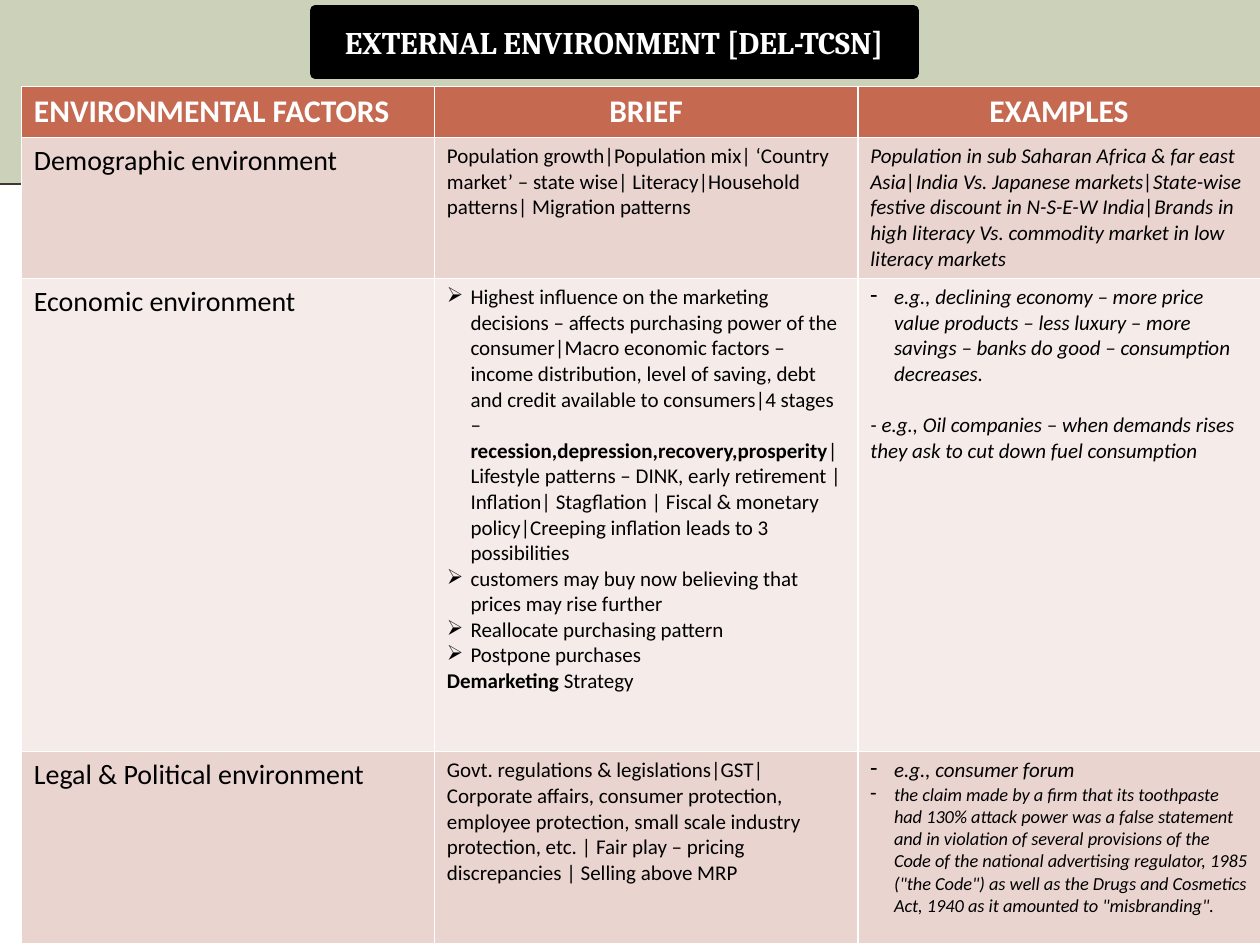
"""Build the slide on the external marketing environment."""
from lxml import etree
from pptx import Presentation
from pptx.dml.color import RGBColor
from pptx.enum import shapes, text
from pptx.oxml import ns
from pptx.util import Pt


def paint(fill, tint):
    fill.solid()
    fill.fore_color.rgb = RGBColor.from_string(tint)


def write(para, words, size, tint="000000", face="Calibri", bold=False, slant=False):
    run = para.add_run()
    run.text = words
    font = run.font
    font.size, font.name, font.bold, font.italic = Pt(size), face, bold, slant
    paint(font.fill, tint)


deck = Presentation()
deck.slide_width, deck.slide_height = Pt(720), Pt(540)
slide = deck.slides.add_slide(deck.slide_layouts[5])
paint(slide.background.fill, "CCD1B9")

page = slide.shapes.add_shape(shapes.MSO_SHAPE.RECTANGLE, Pt(0), Pt(105), Pt(720), Pt(435))
page.shadow.inherit = False
paint(page.fill, "FFFFFF")
page.line.fill.background()

rule = slide.shapes.add_connector(shapes.MSO_CONNECTOR.STRAIGHT, Pt(0), Pt(105), Pt(720), Pt(105))
paint(rule.line.fill, "3E3737")
rule.line.width = Pt(1)
etree.SubElement(rule._element.spPr, ns.qn("a:effectLst"))

title = slide.shapes.title
title.left, title.top, title.width, title.height = Pt(180), Pt(6), Pt(342), Pt(36)
paint(title.fill, "000000")
paint(title.line.fill, "000000")
title.line.width = Pt(6)
frame = title.text_frame
frame.vertical_anchor = text.MSO_ANCHOR.MIDDLE
frame.auto_size = text.MSO_AUTO_SIZE.NONE
para = frame.paragraphs[0]
para.alignment = text.PP_ALIGN.CENTER
para.space_before = Pt(4)
write(para, "EXTERNAL ENVIRONMENT [DEL-TCSN]", 18, "FFFFFF", "Cambria", True)

heads = ["ENVIRONMENTAL FACTORS", "BRIEF", "EXAMPLES"]
rows = [
    ("Demographic environment",
     [("", 12, 0, ["Population growth|Population mix| ‘Country market’ – state wise| "
                   "Literacy|Household patterns| Migration patterns"])],
     [("", 12, 0, ["Population in sub Saharan Africa & far east Asia|India Vs. Japanese markets|"
                   "State-wise festive discount in N-S-E-W India|Brands in high literacy Vs. "
                   "commodity market in low literacy markets"])]),
    ("Economic environment",
     [("➢", 12, 0, ["Highest influence on the marketing decisions – affects purchasing power of "
                    "the consumer|Macro economic factors – income distribution, level of saving, "
                    "debt and credit available to consumers|4 stages – ",
                    "recession,depression,recovery,prosperity",
                    "|Lifestyle patterns – DINK, early retirement | Inflation| Stagflation | "
                    "Fiscal & monetary policy|Creeping inflation leads to 3 possibilities"]),
      ("➢", 12, 0, ["customers may buy now believing that prices may rise further"]),
      ("➢", 12, 0, ["Reallocate purchasing pattern"]),
      ("➢", 12, 0, ["Postpone purchases"]),
      ("", 12, 0, ["", "Demarketing", " Strategy"])],
     [("-", 12, 0, ["e.g., declining economy – more price value products – less luxury – more "
                    "savings – banks do good – consumption decreases."]),
      ("", 12, 14.6, ["- e.g., Oil companies – when demands rises they ask to cut down fuel "
                      "consumption"])]),
    ("Legal & Political environment",
     [("", 12, 0, ["Govt. regulations & legislations|GST|Corporate affairs, consumer protection, "
                   "employee protection, small scale industry protection, etc. | Fair play – "
                   "pricing discrepancies | Selling above MRP"])],
     [("-", 12, 0, ["e.g., consumer forum"]),
      ("-", 10.5, 0, ["the claim made by a firm that its toothpaste had 130% attack power was a "
                      "false statement and in violation of several provisions of the Code of "
                      "the national advertising regulator, 1985 (\"the Code\") as well as the "
                      "Drugs and Cosmetics Act, 1940 as it amounted to \"misbranding\"."])]),
]

grid = slide.shapes.add_table(4, 3, Pt(12.2), Pt(49.4), Pt(708), Pt(490)).table
for col, width in zip(grid.columns, [236, 242, 230]):
    col.width = Pt(width)
for row, height in zip(grid.rows, [29, 80.5, 270.5, 110]):
    row.height = Pt(height)

for x, head in enumerate(heads):
    cell = grid.cell(0, x)
    paint(cell.fill, "C66951")
    para = cell.text_frame.paragraphs[0]
    para.alignment = text.PP_ALIGN.CENTER if x else text.PP_ALIGN.LEFT
    write(para, head, 18, "FFFFFF", bold=True)

for y, (name, brief, cases) in enumerate(rows, 1):
    for x, paras in enumerate([[("", 16, 0, [name])], brief, cases]):
        cell = grid.cell(y, x)
        paint(cell.fill, "EAD4D0" if y % 2 else "F5EBE9")
        frame = cell.text_frame
        for n, (mark, size, gap, runs) in enumerate(paras):
            para = frame.add_paragraph() if n else frame.paragraphs[0]
            if gap:
                para.space_before = Pt(gap)
            if mark:
                props = para._p.get_or_add_pPr()
                props.set("marL", str(Pt(13.5)))
                props.set("indent", str(-Pt(13.5)))
                etree.SubElement(props, ns.qn("a:buChar")).set("char", mark)
            for k, words in enumerate(runs):
                if words:
                    write(para, words, size, bold=k % 2 == 1, slant=x == 2)

deck.save("out.pptx")
